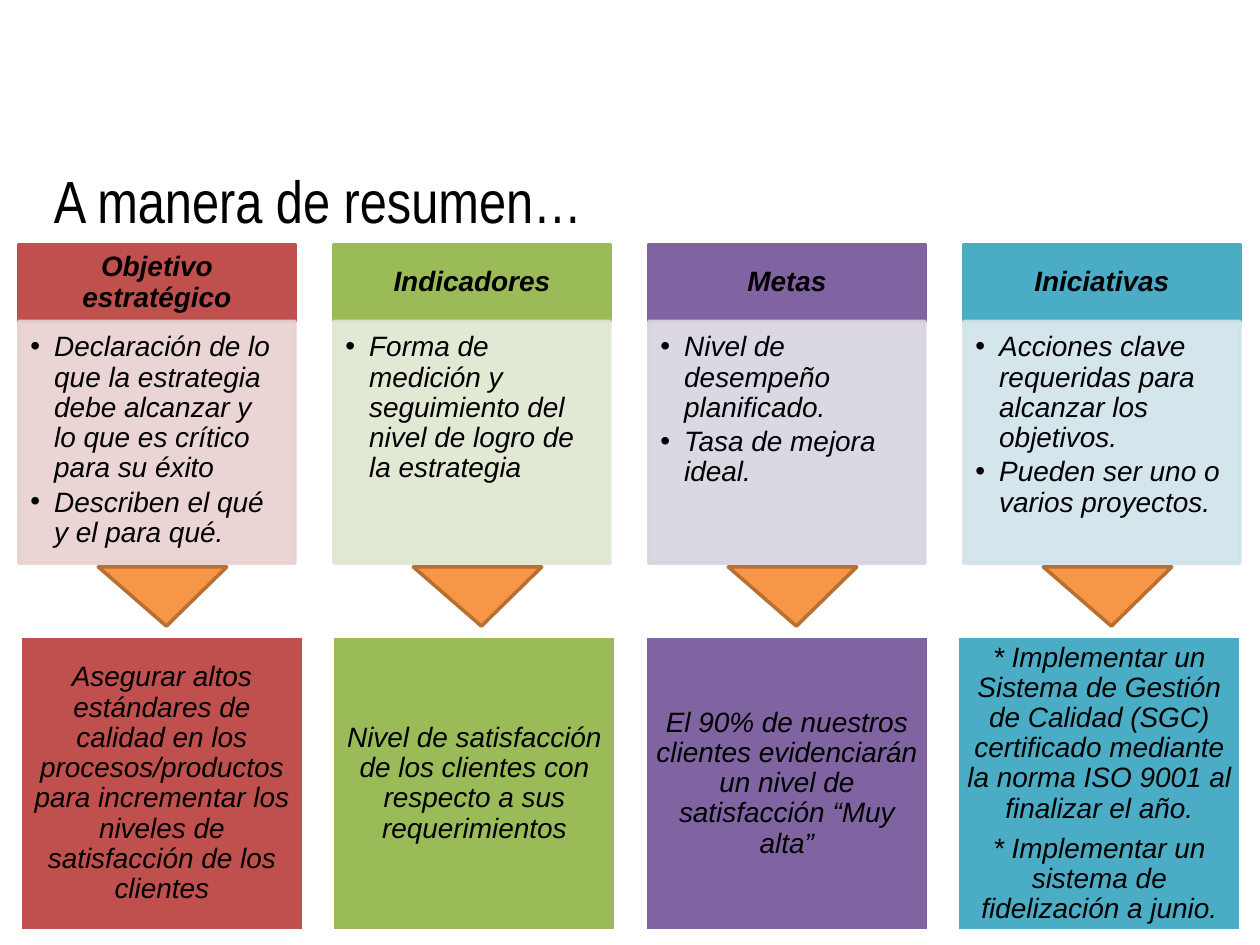
from lxml import etree
from pptx import Presentation
from pptx import util as u
from pptx.dml.color import RGBColor
from pptx.enum import shapes, text
from pptx.oxml.ns import qn

HUES = {
    "red": "C0504D", "green": "9BBB59", "violet": "8064A2", "teal": "4BACC6",
    "pale red": "E8D0D0", "pale green": "DEE7D1",
    "pale violet": "D8D3E0", "pale teal": "D0E3EA",
    "orange": "F79646", "brown": "B76F34", "white": "FFFFFF", "black": "000000",
}
BODY = {"name": "Arial", "size": u.Pt(16), "italic": True, "bold": False}
HEAD = {**BODY, "bold": True}
TITLE = {"name": "Arial Narrow", "size": u.Pt(34)}
MID = {"alignment": text.PP_ALIGN.CENTER, "line_spacing": 0.9, "space_after": u.Pt(5.6)}
LIST = {"alignment": text.PP_ALIGN.LEFT, "line_spacing": 0.9, "space_after": u.Pt(2.4)}

COLUMNS = [
    ("red", "Objetivo estratégico",
     ["Declaración de lo que la estrategia debe alcanzar y lo que es crítico para su éxito",
      "Describen el qué y el para qué."],
     ["Asegurar altos estándares de calidad en los procesos/productos para "
      "incrementar los niveles de satisfacción de los clientes"]),
    ("green", "Indicadores",
     ["Forma de medición y seguimiento del nivel de logro de la estrategia"],
     ["Nivel de satisfacción de los clientes con respecto a sus requerimientos"]),
    ("violet", "Metas",
     ["Nivel de desempeño planificado.", "Tasa de mejora ideal."],
     ["El 90% de nuestros clientes evidenciarán un nivel de satisfacción “Muy alta”"]),
    ("teal", "Iniciativas",
     ["Acciones clave requeridas para alcanzar los objetivos.",
      "Pueden ser uno o varios proyectos."],
     ["* Implementar un Sistema de Gestión de Calidad (SGC) certificado mediante "
      "la norma ISO 9001 al finalizar el año.",
      "* Implementar un sistema de fidelización a junio."]),
]


def apply(obj, vals):
    """Set every attribute given in a dict of format values."""
    for key, val in vals.items():
        setattr(obj, key, val)


class Deck:
    """Holds the style and the current slide."""

    def __init__(self, slide):
        self.slide = slide

    def paint(self, fmt, hue, alpha=None):
        """Give a fill a solid colour, with opacity in percent."""
        fmt.solid()
        fmt.fore_color.rgb = RGBColor.from_string(HUES[hue])
        if alpha:
            clr = fmt._xPr.find(".//" + qn("a:srgbClr"))
            etree.SubElement(clr, qn("a:alpha"), val=str(alpha * 1000))

    def shape(self, kind, at, fill, edge, alpha=None):
        """Add a filled and outlined preset shape."""
        form = self.slide.shapes.add_shape(kind, *map(u.Inches, at))
        form.shadow.inherit = False
        self.paint(form.fill, fill, alpha)
        self.paint(form.line.fill, edge, alpha)
        form.line.width = u.Pt(2)
        return form

    def label(self, form, lines, font, para, pads, anchor, bullet=False):
        """Fill a shape with styled paragraphs."""
        frame = form.text_frame
        sides = ("margin_left", "margin_top", "margin_right", "margin_bottom")
        apply(frame, dict(zip(sides, map(u.Inches, pads))))
        apply(frame, {"word_wrap": True, "vertical_anchor": anchor})
        for i, line in enumerate(lines):
            par = frame.add_paragraph() if i else frame.paragraphs[0]
            apply(par, para)
            if bullet:
                self.bullet(par)
            run = par.add_run()
            run.text = line
            apply(run.font, font)
            run.font.color.rgb = RGBColor.from_string(HUES["black"])

    def bullet(self, par):
        """Give a paragraph a hanging bullet."""
        props = par._p.get_or_add_pPr()
        hang = u.Inches(0.19)
        props.set("marL", str(hang))
        props.set("indent", str(-hang))
        etree.SubElement(props, qn("a:buFont"), typeface="Arial")
        etree.SubElement(props, qn("a:buChar"), char="•")

    def title(self, at, line):
        """Add the heading of the slide."""
        box = self.slide.shapes.add_textbox(*map(u.Inches, at))
        self.label(box, [line], TITLE, {}, (0.1, 0.05, 0.1, 0.05), text.MSO_ANCHOR.MIDDLE)

    def block(self, at, fill, edge, lines, font, pads):
        """Add a rectangle with centred text."""
        form = self.shape(shapes.MSO_SHAPE.RECTANGLE, at, fill, edge)
        self.label(form, lines, font, MID, pads, text.MSO_ANCHOR.MIDDLE)

    def panel(self, at, hue, lines):
        """Add a pale rectangle with a bulleted list."""
        form = self.shape(shapes.MSO_SHAPE.RECTANGLE, at, hue, hue, 90)
        self.label(form, lines, BODY, LIST, (0.09, 0.09, 0.12, 0.14),
                   text.MSO_ANCHOR.TOP, True)

    def point(self, at):
        """Add a triangle that points down."""
        form = self.shape(shapes.MSO_SHAPE.ISOSCELES_TRIANGLE, at, "orange", "brown")
        form.adjustments[0] = 0.53
        form._element.spPr.xfrm.set("flipV", "1")


def main():
    """Build the summary slide."""
    prs = Presentation()
    apply(prs, {"slide_width": u.Inches(10), "slide_height": u.Inches(7.5)})
    deck = Deck(prs.slides.add_slide(prs.slide_layouts[6]))
    deck.title((0.33, 1.23, 9, 0.71), "A manera de resumen…")
    for i, (hue, head, notes, case) in enumerate(COLUMNS):
        left = 0.15 + 2.5 * i
        deck.block((left, 1.94, 2.19, 0.61), hue, hue, [head], HEAD,
                   (0.12, 0.07, 0.12, 0.07))
        deck.panel((left, 2.55, 2.19, 1.92), "pale " + hue, notes)
        deck.block((0.16 + 2.48 * i, 5.05, 2.25, 2.34), hue, "white", case, BODY,
                   (0.07,) * 4)
        deck.point((0.78 + 2.5 * i, 4.5, 1.02, 0.47))
    prs.save("out.pptx")


if __name__ == "__main__":
    main()
